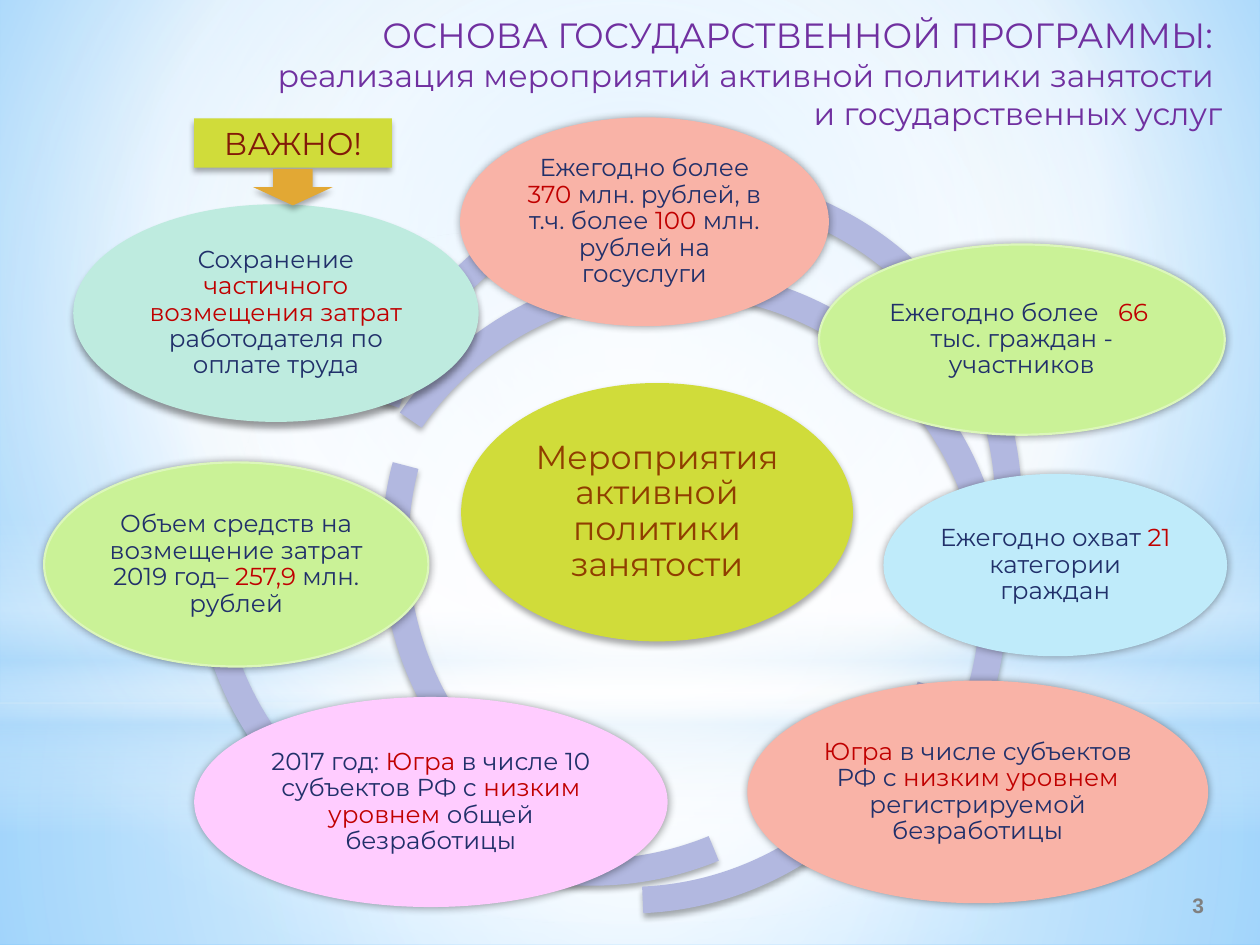
from lxml import etree
from pptx import Presentation
from pptx.dml.color import RGBColor
from pptx.enum.shapes import MSO_SHAPE
from pptx.enum.text import MSO_ANCHOR, PP_ALIGN
from pptx.oxml.ns import qn
from pptx.util import Inches, Pt

RECT, OVAL = MSO_SHAPE.RECTANGLE, MSO_SHAPE.OVAL
ARC, DOWN = MSO_SHAPE.BLOCK_ARC, MSO_SHAPE.DOWN_ARROW
CENTER, RIGHT = PP_ALIGN.CENTER, PP_ALIGN.RIGHT
MIDDLE = MSO_ANCHOR.MIDDLE

WHITE = RGBColor(0xFF, 0xFF, 0xFF)
SKY = RGBColor(0x9E, 0xD5, 0xFF)
DEEP_SKY = RGBColor(0x5B, 0xB9, 0xFF)
HAZE = RGBColor(0xB4, 0xDC, 0xFA)
PURPLE = RGBColor(0x70, 0x30, 0xA0)
NAVY = RGBColor(0x21, 0x30, 0x6A)
RED = RGBColor(0xC0, 0x00, 0x00)
BROWN = RGBColor(0x90, 0x3E, 0x00)
MAROON = RGBColor(0x82, 0x1A, 0x08)
GRAY = RGBColor(0x80, 0x80, 0x80)
LILAC = RGBColor(0xB2, 0xB8, 0xE0)
LIME = RGBColor(0xD0, 0xDC, 0x3A)
AMBER = RGBColor(0xE2, 0xA8, 0x34)
SALMON = RGBColor(0xF9, 0xB3, 0xA7)
GREEN = RGBColor(0xCA, 0xF2, 0x97)
PALE_GREEN = RGBColor(0xDC, 0xF7, 0xBA)
BLUE = RGBColor(0xBF, 0xEB, 0xFA)
PINK = RGBColor(0xFF, 0xCC, 0xFF)
MINT = RGBColor(0xBE, 0xEB, 0xDF)

# Shadows: opacity %, blur pt, distance pt, direction in degrees
DROP, GLOW, LOW = (32, 3.5, 2.2, 90), (40, 5, 0, 0), (40, 4, 3, 90)

# The grid has 100 columns and 75 rows; places are left, top, width, height in cells
CELL = Inches(0.1)

prs = Presentation()
prs.slide_width, prs.slide_height = 100 * CELL, 75 * CELL
s = prs.slides.add_slide(prs.slide_layouts[6])


def draw(kind, box, fill=None, line=None, shadow=None):
    sp = s.shapes.add_shape(kind, *(int(v * CELL) for v in box))
    sp.shadow.inherit = False
    if fill is not None:
        sp.fill.solid()
        sp.fill.fore_color.rgb = fill
    if line is None:
        sp.line.fill.background()
    else:
        sp.line.color.rgb = line
        sp.line.width = Pt(1.25)
    if shadow:
        opacity, blur, dist, angle = shadow
        outer = etree.SubElement(
            sp._element.spPr.find(qn("a:effectLst")), qn("a:outerShdw"),
            blurRad=str(Pt(blur)), dist=str(Pt(dist)), dir=str(angle * 60000),
            algn="ctr", rotWithShape="0")
        black = etree.SubElement(outer, qn("a:srgbClr"), val="000000")
        etree.SubElement(black, qn("a:alpha"), val=str(opacity * 1000))
    return sp


def write(tf, text, size, color, align=CENTER, font="Montserrat", bold=False,
          anchor=MIDDLE, inset=None, spacing=None):
    """Fill a frame, one paragraph per line; parts between asterisks are red.

    size is a list with one value per line."""
    tf.word_wrap = True
    tf.vertical_anchor = anchor
    if inset is not None:
        tf.margin_left = tf.margin_right = Inches(inset)
        tf.margin_top = tf.margin_bottom = Inches(inset)
    for i, (row, points) in enumerate(zip(text.split("\n"), size)):
        p = tf.add_paragraph() if i else tf.paragraphs[0]
        p.alignment = align
        if spacing:
            p.line_spacing = spacing
        for j, part in enumerate(row.split("*")):
            if part:
                r = p.add_run()
                r.text = part
                r.font.name, r.font.size, r.font.bold = font, Pt(points), bold
                r.font.color.rgb = RED if j % 2 else color


# Backdrop: stops are position %, colour, opacity %;
# a direction is an angle or the insets of the focus rectangle in %
MID = (50, 50, 50, 50)
backdrop = [
    (None, None, (20, 10, 20, 60),
     [(0, SKY, 100), (60, WHITE, 100), (100, DEEP_SKY, 100)]),
    (RECT, (0, 55.8, 100, 19.2), MID,
     [(0, WHITE, 91), (37, WHITE, 76), (100, HAZE, 79)]),
    (RECT, (0, 0, 100, 55.8), MID,
     [(0, WHITE, 89), (48, WHITE, 62), (100, HAZE, 79)]),
    (RECT, (0, 41.2, 100, 25), 90,
     [(0, WHITE, 0), (29, WHITE, 30), (45, HAZE, 40), (55, WHITE, 26),
      (65, HAZE, 60), (100, WHITE, 0)]),
    (OVAL, (0, 17.5, 100, 55.8), MID, [(0, WHITE, 100), (56, WHITE, 0)]),
]
for kind, box, direction, stops in backdrop:
    sp = draw(kind, box) if kind else None
    (sp or s.background).fill.gradient()
    grad = next((sp._element if sp else s.element).iter(qn("a:gradFill")))
    for child in list(grad):
        grad.remove(child)
    gs_list = etree.SubElement(grad, qn("a:gsLst"))
    for pos, color, opacity in stops:
        gs = etree.SubElement(gs_list, qn("a:gs"), pos=str(pos * 1000))
        clr = etree.SubElement(gs, qn("a:srgbClr"), val=str(color))
        if opacity < 100:
            etree.SubElement(clr, qn("a:alpha"), val=str(opacity * 1000))
    if isinstance(direction, tuple):
        focus = etree.SubElement(grad, qn("a:path"), path="circle")
        etree.SubElement(focus, qn("a:fillToRect"),
                         {k: str(v * 1000) for k, v in zip("ltrb", direction)})
    else:
        etree.SubElement(grad, qn("a:lin"), ang=str(direction * 60000), scaled="0")

# Title
tb = s.shapes.add_textbox(*(int(v * CELL) for v in (10.6, 0.6, 87.4, 10.4)))
write(tb.text_frame,
      "ОСНОВА ГОСУДАРСТВЕННОЙ ПРОГРАММЫ: \n"
      "реализация мероприятий активной политики занятости \n"
      "и государственных услуг",
      [20, 18, 18], PURPLE, align=RIGHT, anchor=MSO_ANCHOR.TOP)

# Ring of arcs: left, top, start and end angle in degrees
RING = 52.8
arcs = [
    (15.4, 17.6, 132.3, 174.96), (22.5, 14.3, 99.5, 127.13),
    (20.6, 17.5, 67.62, 101.24), (23.5, 19.7, 19.2, 87.49),
    (27.1, 21.3, 214.49, 24.26), (28.3, 13.7, 198.57, 7.25),
    (30.3, 17, 150.07, 194.75),
]
for left, top, start, end in arcs:
    sp = draw(ARC, (left, top, RING, RING), LILAC, shadow=DROP)
    # Adjustments are in units of 100000, angles in 60000ths of a degree
    for i, value in enumerate((start * 0.6, end * 0.6, 0.04)):
        sp.adjustments[i] = value

# Hub
sp = draw(OVAL, (36.6, 30.4, 31.1, 20.5), LIME, shadow=DROP)
write(sp.text_frame, "Мероприятия активной политики занятости", [19], BROWN,
      inset=0.03, spacing=0.9)

# Ovals on the ring, clockwise from the top
ovals = [
    ((36.6, 9.4, 29.1, 16.4), SALMON, SALMON, GLOW,
     "Ежегодно более *370 *млн. рублей, в т.ч. более *100* млн. рублей на госуслуги"),
    ((65, 19.4, 32.2, 15.1), GREEN, PALE_GREEN, GLOW,
     "Ежегодно более   *66*  тыс. граждан - участников"),
    ((70.2, 37.7, 27.1, 14.3), BLUE, BLUE, GLOW,
     "Ежегодно охват *21* категории граждан"),
    ((59.4, 54.1, 36.4, 17.5), SALMON, SALMON, GLOW,
     "*Югра* в числе субъектов РФ с *низким уровнем *регистрируемой безработицы"),
    ((15.5, 55.4, 37.4, 16.5), PINK, PINK, GLOW,
     "2017 год: *Югра* в числе 10 субъектов РФ с* низким уровнем *общей безработицы"),
    ((3.5, 36.7, 30.5, 16.2), GREEN, PALE_GREEN, GLOW,
     "Объем средств на возмещение затрат 2019 год– *257,9 *млн. рублей"),
    ((5.9, 16.3, 32, 17.1), MINT, MINT, LOW,
     "Сохранение *частичного возмещения затрат *работодателя по оплате труда"),
]
for box, fill, line, shadow, text in ovals:
    sp = draw(OVAL, box, fill, line, shadow)
    write(sp.text_frame, text, [14], NAVY, inset=0.02, spacing=0.9)

# Callout
sp = draw(RECT, (15.4, 9.4, 15.7, 3.9), LIME, shadow=DROP)
write(sp.text_frame, "ВАЖНО!", [18], MAROON)
draw(DOWN, (20.1, 13.4, 6.3, 2.9), AMBER, shadow=DROP)

# Slide number
tb = s.shapes.add_textbox(*(int(v * CELL) for v in (90.2, 69.8, 9.8, 4)))
write(tb.text_frame, "3", [12], GRAY, font="Arial", bold=True)

prs.save("out.pptx")
